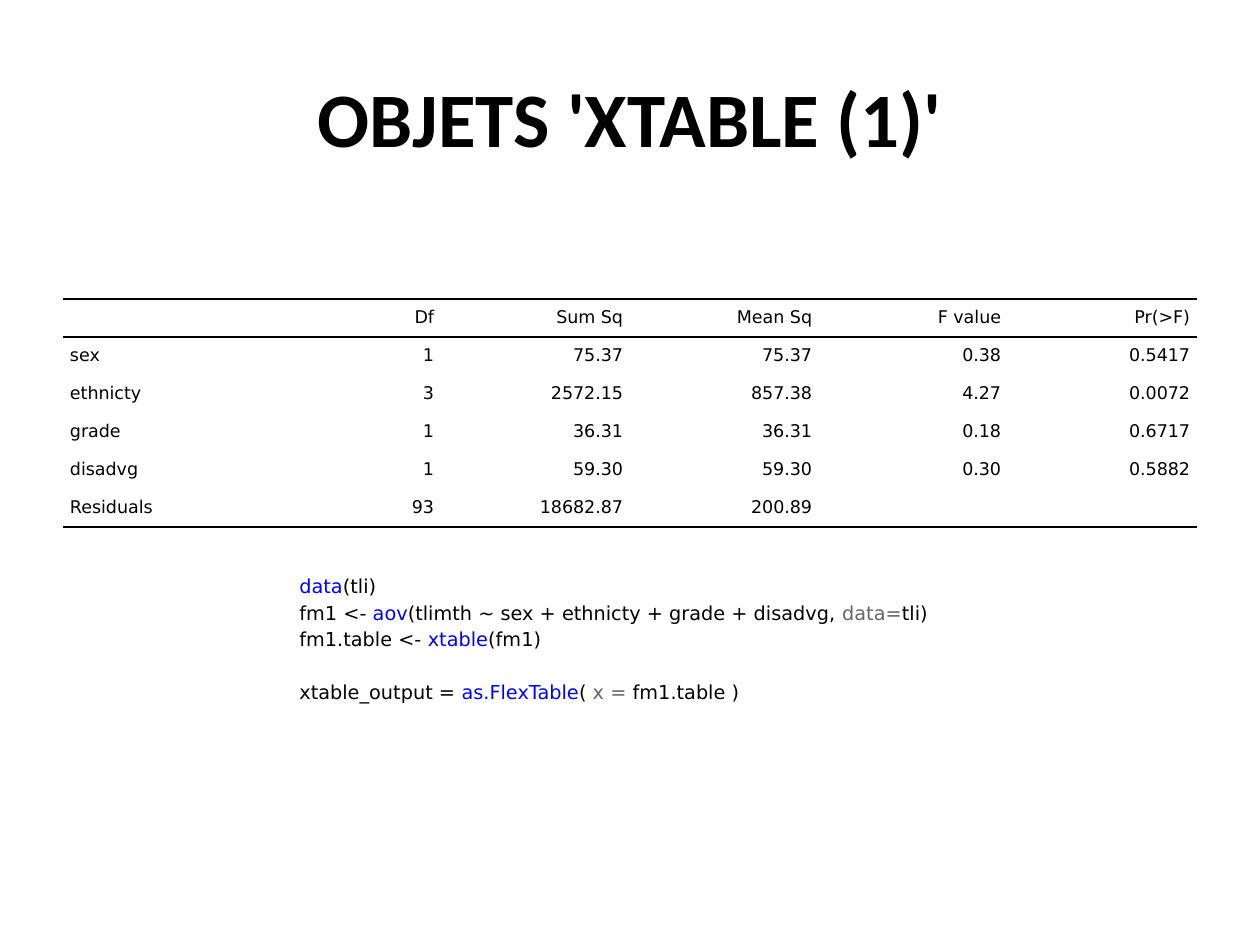
"""Build a slide that shows an ANOVA table and the R code that makes it."""
import dataclasses

import lxml.etree
import pptx
import pptx.dml.color
import pptx.enum.text
import pptx.oxml.ns
import pptx.util

PX_PER_INCH = 126
ALIGN = pptx.enum.text.PP_ALIGN
MIDDLE = pptx.enum.text.MSO_ANCHOR.MIDDLE


@dataclasses.dataclass(frozen=True)
class Theme:
    ink: str = "000000"
    paper: str = "FFFFFF"
    function: str = "0000FF"
    argument: str = "666666"
    heading_font: str = "Calibri"
    body_font: str = "DejaVu Sans"
    heading_size: int = 44
    table_size: int = 10
    code_size: int = 11
    rule_width: int = 1


THEME = Theme()

ANOVA = [
    ["", "Df", "Sum Sq", "Mean Sq", "F value", "Pr(>F)"],
    ["sex", "1", "75.37", "75.37", "0.38", "0.5417"],
    ["ethnicty", "3", "2572.15", "857.38", "4.27", "0.0072"],
    ["grade", "1", "36.31", "36.31", "0.18", "0.6717"],
    ["disadvg", "1", "59.30", "59.30", "0.30", "0.5882"],
    ["Residuals", "93", "18682.87", "200.89", "", ""],
]

MODEL_CODE = [
    [("data", THEME.function), "(tli)"],
    ["fm1 <- ", ("aov", THEME.function),
     "(tlimth ~ sex + ethnicty + grade + disadvg, ",
     ("data=", THEME.argument), "tli)"],
    ["fm1.table <- ", ("xtable", THEME.function), "(fm1)"],
]
OUTPUT_CODE = [
    ["xtable_output = ", ("as.FlexTable", THEME.function), "( ",
     ("x =", THEME.argument), " fm1.table )"],
]


def px(length):
    return pptx.util.Emu(round(length * pptx.util.Inches(1) / PX_PER_INCH))


def write(paragraph, pieces, *, size, font, color=THEME.ink, bold=False,
          align=ALIGN.LEFT, before=0, after=0, indent=0):
    paragraph.alignment = align
    paragraph.space_before = pptx.util.Pt(before)
    paragraph.space_after = pptx.util.Pt(after)
    if indent:
        paragraph._p.get_or_add_pPr().set("marL", str(px(indent)))
    for piece in pieces:
        words, tint = (piece, color) if isinstance(piece, str) else piece
        run = paragraph.add_run()
        run.text = words
        run.font.size = pptx.util.Pt(size)
        run.font.name = font
        run.font.bold = bold
        run.font.color.rgb = pptx.dml.color.RGBColor.from_string(tint)


class SlideBuilder:
    def __init__(self, slide, theme):
        self.slide = slide
        self.theme = theme

    def title(self, words, left, top, width, height):
        heading = self.slide.shapes.title
        heading.left, heading.top = px(left), px(top)
        heading.width, heading.height = px(width), px(height)
        heading.text_frame.vertical_anchor = MIDDLE
        write(heading.text_frame.paragraphs[0], [words], bold=True,
              size=self.theme.heading_size, font=self.theme.heading_font,
              align=ALIGN.CENTER)

    def rule(self, cell, side, visible):
        qn = pptx.oxml.ns.qn
        line = lxml.etree.Element(qn(f"a:ln{side}"))
        if visible:
            line.set("w", str(pptx.util.Pt(self.theme.rule_width)))
            fill = lxml.etree.SubElement(line, qn("a:solidFill"))
            lxml.etree.SubElement(fill, qn("a:srgbClr"), val=self.theme.ink)
        else:
            lxml.etree.SubElement(line, qn("a:noFill"))
        return line

    def table(self, rows, left, top, column_width, row_height):
        grid = self.slide.shapes.add_table(
            len(rows), len(rows[0]), px(left), px(top),
            px(column_width * len(rows[0])), px(row_height * len(rows))).table
        grid.first_row = grid.horz_banding = False
        for r, row in enumerate(rows):
            grid.rows[r].height = px(row_height)
            ruled = {"T": r in (0, 1), "B": r in (0, len(rows) - 1)}
            for c, value in enumerate(row):
                cell = grid.cell(r, c)
                cell.vertical_anchor = MIDDLE
                cell.margin_left = cell.margin_right = 0
                cell.margin_top = cell.margin_bottom = 0
                cell.fill.solid()
                cell.fill.fore_color.rgb = pptx.dml.color.RGBColor.from_string(
                    self.theme.paper)
                for position, side in enumerate("LRTB"):
                    cell._tc.tcPr.insert(
                        position, self.rule(cell, side, ruled.get(side)))
                paragraph = cell.text_frame.paragraphs[0]
                write(paragraph, [value], size=self.theme.table_size,
                      font=self.theme.body_font, before=1, after=1,
                      align=ALIGN.RIGHT if c else ALIGN.LEFT, indent=7)
                paragraph._p.pPr.set("marR", str(px(7)))

    def code(self, blocks, left, top, width, height):
        frame = self.slide.shapes.add_textbox(
            px(left), px(top), px(width), px(height)).text_frame
        frame.word_wrap = True
        paragraph = frame.paragraphs[0]
        for b, block in enumerate(blocks):
            for n, pieces in enumerate(block):
                if b or n:
                    paragraph = frame.add_paragraph()
                write(paragraph, pieces, size=self.theme.code_size,
                      font=self.theme.body_font, after=1, indent=1,
                      before=16 if b and not n else 1)


def main():
    deck = pptx.Presentation()
    deck.slide_width, deck.slide_height = px(1260), px(945)
    title_only = deck.slide_layouts[5]
    builder = SlideBuilder(deck.slides.add_slide(title_only), THEME)
    builder.title("OBJETS 'XTABLE (1)'", 63, 38, 1134, 158)
    builder.table(ANOVA, 63, 299, 189, 38)
    builder.code([MODEL_CODE, OUTPUT_CODE], 286, 568, 687, 155)
    deck.save("out.pptx")


if __name__ == "__main__":
    main()
